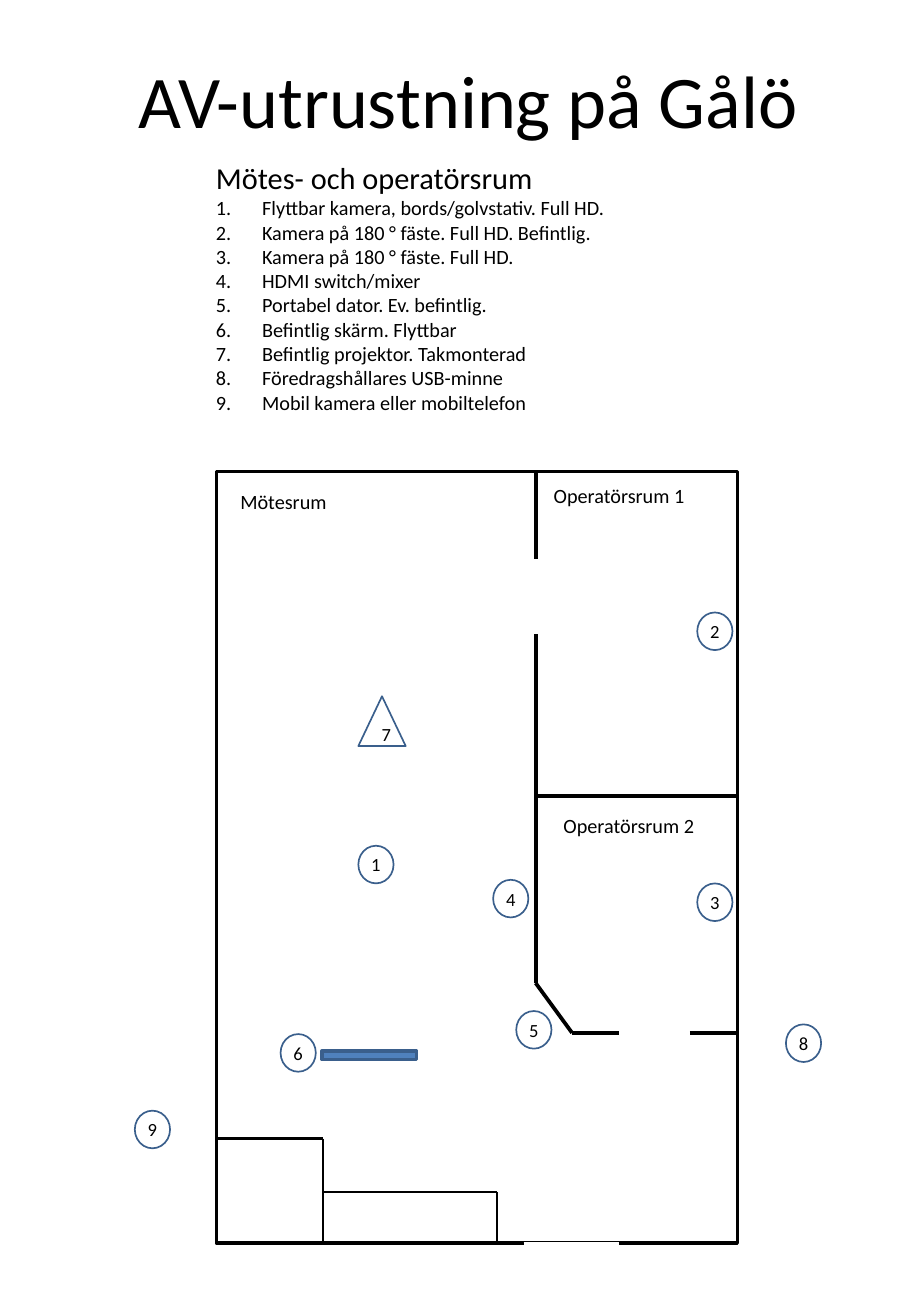
from dataclasses import dataclass
from lxml.etree import SubElement
from pptx import Presentation
from pptx.dml.color import RGBColor
from pptx.enum.shapes import MSO_CONNECTOR, MSO_SHAPE
from pptx.enum.text import MSO_ANCHOR, PP_ALIGN
from pptx.oxml.ns import qn
from pptx.util import Inches, Pt


@dataclass
class Theme:
    font: str = "Calibri"
    ink: RGBColor = RGBColor(0, 0, 0)
    paper: RGBColor = RGBColor(255, 255, 255)
    screen: RGBColor = RGBColor(0x4F, 0x81, 0xBD)
    outline: RGBColor = RGBColor(0x3A, 0x5F, 0x8C)
    title: int = 44
    heading: int = 18
    body: int = 12
    marker: int = 11


theme = Theme()


def write(para, text, size):
    span = para.add_run()
    span.text = text
    span.font.name = theme.font
    span.font.size = Pt(size)
    span.font.color.rgb = theme.ink
    return span


def draw(kind, left, top, width, height, color, weight):
    shape = page.shapes.add_shape(kind, Inches(left), Inches(top), Inches(width), Inches(height))
    shape.shadow.inherit = False
    shape.fill.background()
    shape.line.color.rgb = color
    shape.line.width = Pt(weight)
    return shape


deck = Presentation()
deck.slide_width = Inches(7.5)
deck.slide_height = Inches(10.83)
page = deck.slides.add_slide(deck.slide_layouts[5])

title = page.shapes.title
title.left, title.top = Inches(1.04), Inches(0.4)
title.width, title.height = Inches(5.72), Inches(0.84)
title.text_frame.word_wrap = False
title.text_frame.vertical_anchor = MSO_ANCHOR.TOP
title_para = title.text_frame.paragraphs[0]
title_para.alignment = PP_ALIGN.LEFT
write(title_para, "AV-utrustning på Gålö", theme.title)

left, right, top, bottom = 1.78, 6.07, 3.88, 10.24
divider, door_wall = 4.41, 8.5
draw(MSO_SHAPE.RECTANGLE, left, top, right - left, 6.35, theme.ink, 2)

walls = [
    (divider, top, divider, 4.6, theme.ink, 2.25),
    (divider, 5.22, divider, 8.09, theme.ink, 2.25),
    (divider, 8.09, 4.71, door_wall, theme.ink, 2.25),
    (4.71, door_wall, 5.1, door_wall, theme.ink, 2.25),
    (5.68, door_wall, right, door_wall, theme.ink, 2.25),
    (divider, 6.55, right, 6.55, theme.ink, 2.25),
    (4.31, bottom, 5.1, bottom, theme.paper, 3),
    (left, 9.37, 2.66, 9.37, theme.ink, 1.5),
    (2.66, 9.37, 2.66, bottom, theme.ink, 1.5),
    (2.66, 9.81, 4.09, 9.81, theme.ink, 1.5),
    (4.09, 9.81, 4.09, bottom, theme.ink, 1.5),
]
for x1, y1, x2, y2, color, weight in walls:
    wall = page.shapes.add_connector(
        MSO_CONNECTOR.STRAIGHT, Inches(x1), Inches(y1), Inches(x2), Inches(y2))
    wall.line.color.rgb = color
    wall.line.width = Pt(weight)
    SubElement(wall._element.spPr, qn("a:effectLst"))

screen = draw(MSO_SHAPE.RECTANGLE, 2.65, 8.65, 0.78, 0.07, theme.outline, 2)
screen.fill.solid()
screen.fill.fore_color.rgb = theme.screen

rooms = [
    ("Mötesrum", 1.88, 3.98, 0.92),
    ("Operatörsrum 1", 4.46, 3.93, 1.29),
    ("Operatörsrum 2", 4.54, 6.64, 1.29),
]
for name, x, y, width in rooms:
    box = page.shapes.add_textbox(Inches(x), Inches(y), Inches(width), Inches(0.3))
    box.text_frame.word_wrap = False
    write(box.text_frame.paragraphs[0], name, theme.body)

circle, triangle = MSO_SHAPE.OVAL, MSO_SHAPE.ISOSCELES_TRIANGLE
markers = [
    ("1", circle, 2.95, 6.96, 0.29, 0.31, 0),
    ("2", circle, 5.74, 5.04, 0.29, 0.31, 0),
    ("3", circle, 5.74, 7.27, 0.29, 0.31, 0),
    ("4", circle, 4.06, 7.24, 0.29, 0.31, 0),
    ("5", circle, 4.25, 8.32, 0.29, 0.31, 0),
    ("6", circle, 2.31, 8.51, 0.29, 0.31, 0),
    ("7", triangle, 2.95, 5.73, 0.39, 0.41, 0.07),
    ("8", circle, 6.47, 8.43, 0.29, 0.31, 0),
    ("9", circle, 1.11, 9.14, 0.29, 0.31, 0),
]
for number, kind, x, y, width, height, inset in markers:
    marker = draw(kind, x, y, width, height, theme.outline, 1)
    frame = marker.text_frame
    frame.margin_left = Inches(inset)
    frame.margin_right = frame.margin_top = frame.margin_bottom = 0
    frame.vertical_anchor = MSO_ANCHOR.MIDDLE
    frame.paragraphs[0].alignment = PP_ALIGN.CENTER
    write(frame.paragraphs[0], number, theme.marker)

equipment = [
    "Flyttbar kamera, bords/golvstativ. Full HD.",
    "Kamera på 180 ° fäste. Full HD. Befintlig.",
    "Kamera på 180 ° fäste. Full HD.",
    "HDMI switch/mixer",
    "Portabel dator. Ev. befintlig.",
    "Befintlig skärm. Flyttbar",
    "Befintlig projektor. Takmonterad",
    "Föredragshållares USB-minne",
    "Mobil kamera eller mobiltelefon",
]
legend = page.shapes.add_textbox(Inches(1.68), Inches(1.26), Inches(4.57), Inches(2.42))
legend.text_frame.word_wrap = True
write(legend.text_frame.paragraphs[0], "Mötes- och operatörsrum", theme.heading)
for item in equipment:
    para = legend.text_frame.add_paragraph()
    write(para, item, theme.body)
    properties = para._p.get_or_add_pPr()
    properties.set("marL", str(Inches(0.38)))
    properties.set("indent", str(-Inches(0.38)))
    SubElement(properties, qn("a:buFont"), typeface="+mj-lt")
    SubElement(properties, qn("a:buAutoNum"), type="arabicPeriod")

deck.save("out.pptx")
